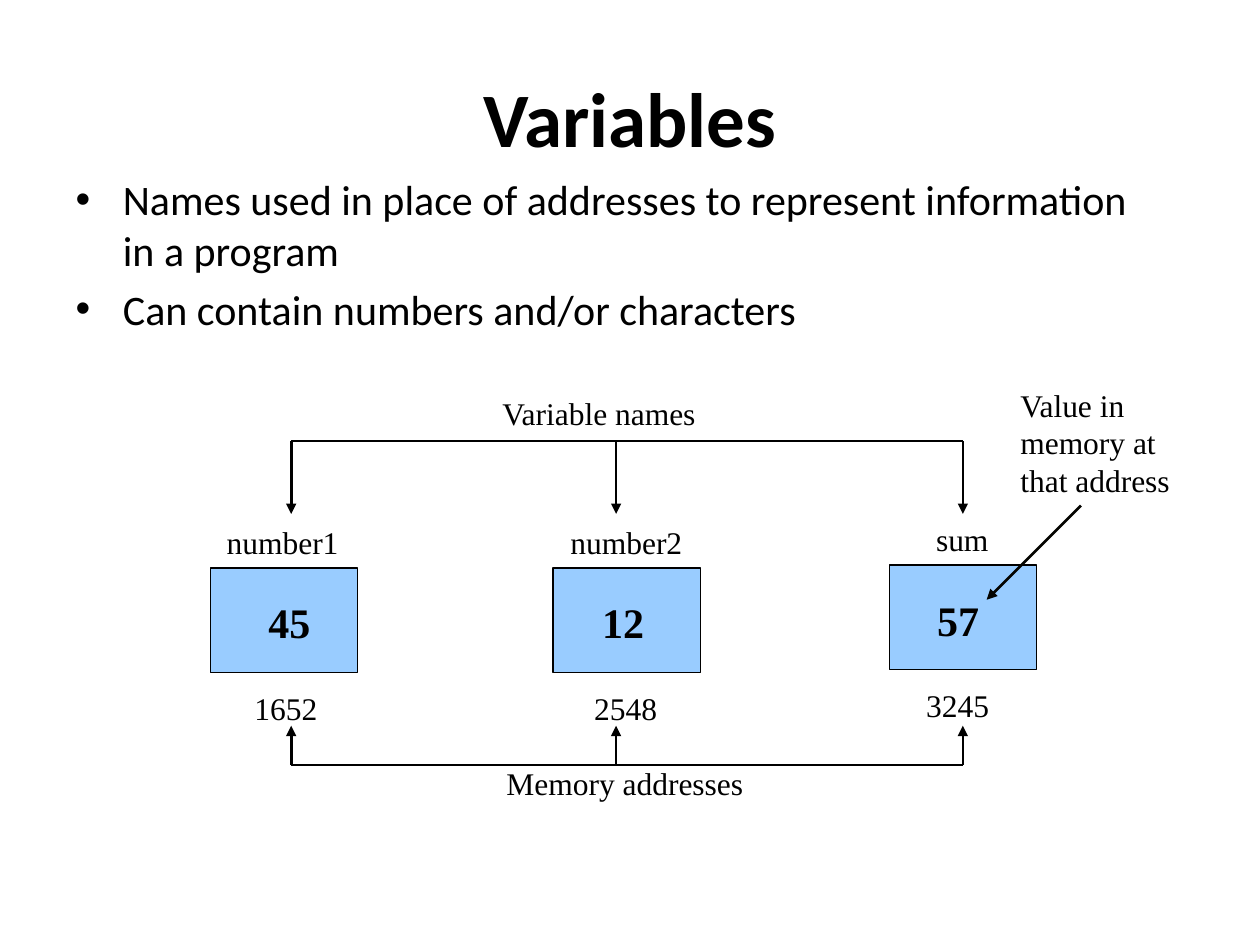
from lxml import etree
from pptx import Presentation
from pptx.dml.color import RGBColor
from pptx.enum.shapes import MSO_CONNECTOR, MSO_SHAPE
from pptx.oxml.ns import qn
from pptx.util import Cm, Pt

LINE = MSO_CONNECTOR.STRAIGHT
RECT = MSO_SHAPE.RECTANGLE
BLACK, BLUE = "000000", "99CCFF"
SERIF, SANS = "Times New Roman", "Calibri"

TITLE = "Variables"
POINTS = [
    "Names used in place of addresses to represent information in a program",
    "Can contain numbers and/or characters",
]
# Each text is (words, left, width); box is a left edge, arrow a centre, in cm
CELLS = [
    dict(name=("number1", 4.32, 2.77), value=("45", 5.16, 1.35),
         address=("1652", 4.88, 1.78), box=4.24, arrow=5.87, lift=0),
    dict(name=("number2", 11.25, 2.77), value=("12", 11.89, 1.35),
         address=("2548", 11.73, 1.78), box=11.15, arrow=12.42, lift=0),
    dict(name=("sum", 18.62, 1.57), value=("57", 18.64, 1.35),
         address=("3245", 18.42, 1.78), box=17.93, arrow=19.41, lift=0.06),
]
# Heights of the horizontal bars and of their arrow tips
BARS = [(8.89, 10.36), (15.42, 14.63)]
CAPTIONS = [
    ("Variable names", 9.88, 7.82, 4.47, 1.02, False),
    ("Memory addresses", 9.96, 15.27, 5.28, 1.02, False),
    ("Value in memory at that address", 20.32, 7.65, 3.63, 2.54, True),
]
POINTER = (21.79, 10.19, 19.89, 12.09)


def color(code):
    return RGBColor.from_string(code)


def write(para, words, size, face=SERIF, bold=False):
    run = para.add_run()
    run.text = words
    font = run.font
    font.size, font.name, font.bold = Pt(size), face, bold
    font.color.rgb = color(BLACK)


def place(shape, *spots):
    shape.left, shape.top, shape.width, shape.height = map(Cm, spots)


def label(words, x, y, w, h, wrap=False, size=18, bold=False):
    box = slide.shapes.add_textbox(Cm(x), Cm(y), Cm(w), Cm(h))
    box.text_frame.word_wrap = wrap
    write(box.text_frame.paragraphs[0], words, size, bold=bold)


def line(x1, y1, x2, y2, arrow=True, code=BLACK):
    link = slide.shapes.add_connector(LINE, Cm(x1), Cm(y1), Cm(x2), Cm(y2))
    link.line.width = Pt(1.5)
    link.line.color.rgb = color(code)
    if arrow:
        etree.SubElement(link.line._get_or_add_ln(), qn("a:tailEnd"), type="triangle")
    etree.SubElement(link._element.spPr, qn("a:effectLst"))


deck = Presentation()
deck.slide_width, deck.slide_height = Cm(25.4), Cm(19.05)
slide = deck.slides.add_slide(deck.slide_layouts[1])

title, body = slide.placeholders
place(title, 1.27, 0.76, 22.86, 3.18)
write(title.text_frame.paragraphs[0], TITLE, 44, SANS, True)
place(body, 1.27, 3.38, 22.43, 12.57)
frame = body.text_frame
for i, point in enumerate(POINTS):
    para = frame.add_paragraph() if i else frame.paragraphs[0]
    write(para, point, 24, SANS)

for cell in CELLS:
    lift = cell["lift"]
    box = slide.shapes.add_shape(
        RECT, Cm(cell["box"]), Cm(11.45 - lift), Cm(2.97), Cm(2.11))
    box.shadow.inherit = False
    box.fill.solid()
    box.fill.fore_color.rgb = color(BLUE)
    box.line.color.rgb = color(BLACK)
    box.line.width = Pt(0.75)
    for key, y, h, size in [("name", 10.41, 1.02, 18), ("value", 11.91, 1.27, 24),
                            ("address", 13.77, 1.02, 18)]:
        words, x, w = cell[key]
        label(words, x, y - lift, w, h, size=size, bold=key == "value")

for bar, tip in BARS:
    line(CELLS[0]["arrow"], bar, CELLS[-1]["arrow"], bar, arrow=False)
    for cell in CELLS:
        line(cell["arrow"], bar, cell["arrow"], tip)

for caption in CAPTIONS:
    label(*caption)
line(*POINTER, code="040400")

deck.save("out.pptx")
